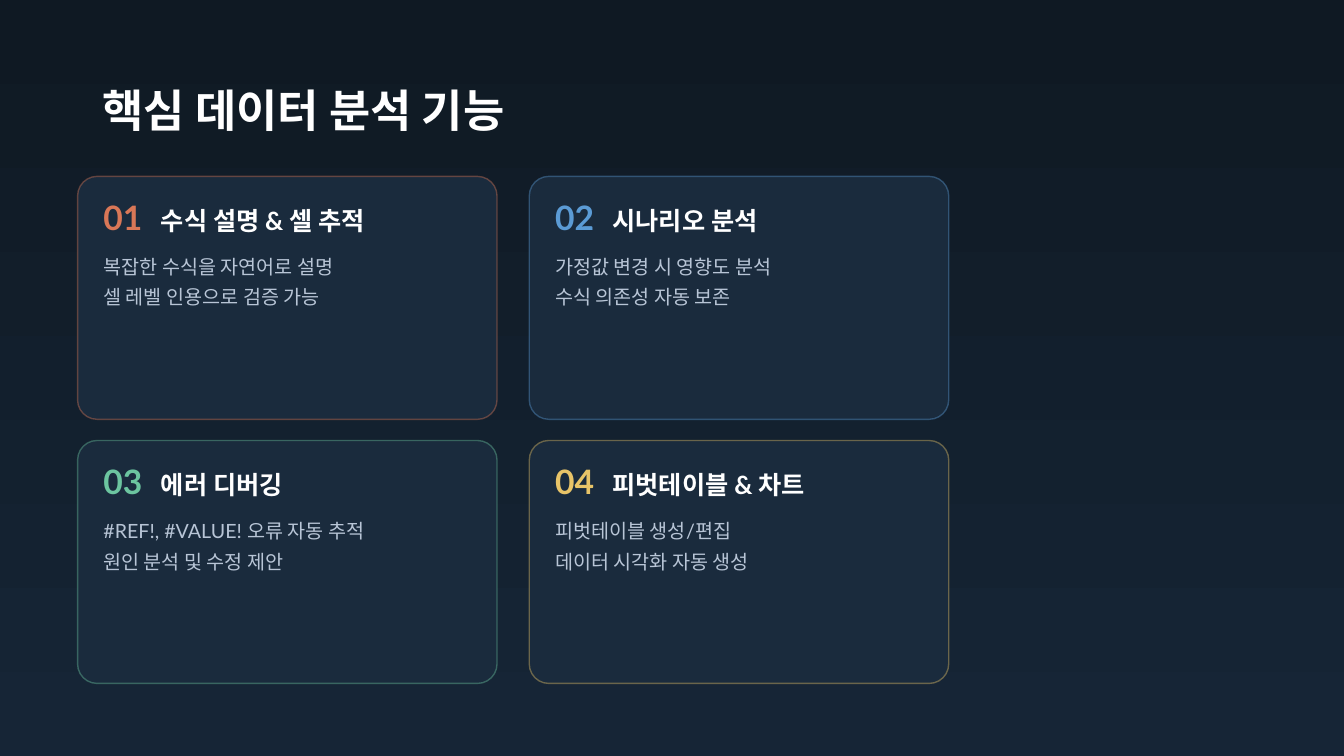
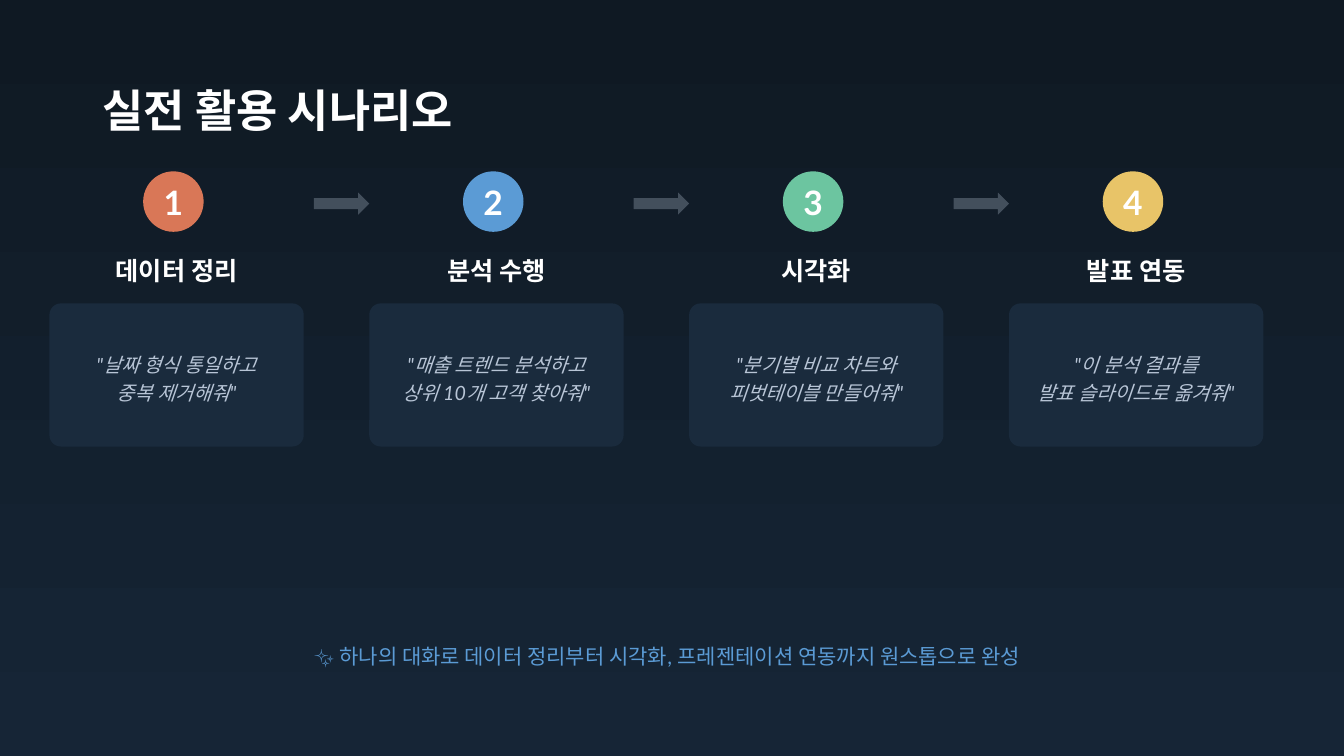
from lxml.etree import SubElement
from pptx import Presentation
from pptx.dml.color import RGBColor
from pptx.enum.shapes import MSO_SHAPE
from pptx.enum.text import MSO_ANCHOR, PP_ALIGN
from pptx.oxml.ns import qn
from pptx.util import Inches, Pt

FONT = "Lato"
COLORS = {
    "top": "0F1923", "bottom": "162536", "card": "1A2B3D",
    "white": "FFFFFF", "muted": "B8C5D6", "orange": "D97757",
    "blue": "5B9BD5", "green": "6CC5A0", "gold": "E8C468",
}
ACCENTS = ["orange", "blue", "green", "gold"]
TITLE_BOX = (0.92, 0.4, 11.5, 1.45)
CARDS_BOX = (0.77, 1.75, 8.64, 5.03)
STEPS_BOX = (0.49, 1.7, 12.04, 2.73)
SUMMARY_BOX = (0.49, 6.23, 12.25, 0.55)

FEATURES = [
    ("수식 설명 & 셀 추적", ["복잡한 수식을 자연어로 설명", "셀 레벨 인용으로 검증 가능"]),
    ("시나리오 분석", ["가정값 변경 시 영향도 분석", "수식 의존성 자동 보존"]),
    ("에러 디버깅", ["#REF!, #VALUE! 오류 자동 추적", "원인 분석 및 수정 제안"]),
    ("피벗테이블 & 차트", ["피벗테이블 생성/편집", "데이터 시각화 자동 생성"]),
]
STEPS = [
    ("데이터 정리", ['"날짜 형식 통일하고', '중복 제거해줘"']),
    ("분석 수행", ['"매출 트렌드 분석하고', '상위 10개 고객 찾아줘"']),
    ("시각화", ['"분기별 비교 차트와', '피벗테이블 만들어줘"']),
    ("발표 연동", ['"이 분석 결과를', '발표 슬라이드로 옮겨줘"']),
]


def rgb(name):
    """Return the named palette colour."""
    return RGBColor.from_string(COLORS[name])


def grid(box, cols, rows, gap_x=0, gap_y=0):
    """Return the cells of an even grid, row by row."""
    x, y, w, h = box
    cw = (w - gap_x * (cols - 1)) / cols
    ch = (h - gap_y * (rows - 1)) / rows
    return [(x + c * (cw + gap_x), y + r * (ch + gap_y), cw, ch)
            for r in range(rows) for c in range(cols)]


def paint(fill, color, alpha=100):
    """Apply a solid colour with an opacity in percent."""
    fill.solid()
    fill.fore_color.rgb = rgb(color)
    if alpha < 100:
        clr = fill._xPr.find(qn("a:solidFill"))[0]
        SubElement(clr, qn("a:alpha"), val=str(alpha * 1000))


def frame(sp, insets, anchor=MSO_ANCHOR.MIDDLE, wrap=True):
    """Set up the text frame of a shape and return it."""
    tf = sp.text_frame
    tf.word_wrap = wrap
    tf.vertical_anchor = anchor
    tf.margin_left, tf.margin_top, tf.margin_right, tf.margin_bottom = map(Inches, insets)
    return tf


def write(p, text, size, color="white", bold=False, italic=False,
          align=PP_ALIGN.CENTER, spacing=None):
    """Add a formatted run to a paragraph."""
    p.alignment = align
    if spacing:
        p.line_spacing = spacing
    r = p.add_run()
    r.text = text
    f = r.font
    f.name, f.size, f.bold, f.italic = FONT, Pt(size), bold, italic
    f.color.rgb = rgb(color)


def shape(s, kind, box, fill, alpha=100, line=None):
    """Add a filled preset shape without shadow."""
    sp = s.shapes.add_shape(kind, *map(Inches, box))
    sp.shadow.inherit = False
    paint(sp.fill, fill, alpha)
    if line:
        sp.line.width = Pt(1)
        paint(sp.line.fill, line, 40)
    else:
        sp.line.fill.background()
    if kind == MSO_SHAPE.ROUNDED_RECTANGLE:
        sp.adjustments[0] = 0.08
    return sp


def label(s, box, text, size, insets=(0, 0, 0, 0), **fmt):
    """Add a one-line text box."""
    sp = s.shapes.add_textbox(*map(Inches, box))
    write(frame(sp, insets).paragraphs[0], text, size, **fmt)


def base_slide(prs, title):
    """Add a slide with the shared background and title."""
    s = prs.slides.add_slide(prs.slide_layouts[6])
    fill = s.background.fill
    fill.gradient()
    fill.gradient_angle = 270
    for stop, pos, color in zip(fill.gradient_stops, (0, 1), ("top", "bottom")):
        stop.position = pos
        stop.color.rgb = rgb(color)
    label(s, TITLE_BOX, title, 32, (0.1, 0.05, 0.1, 0.05), bold=True,
          align=PP_ALIGN.LEFT, spacing=0.9)
    return s


def feature_card(s, box, number, accent, heading, lines):
    """Draw a numbered feature card in its box."""
    sp = shape(s, MSO_SHAPE.ROUNDED_RECTANGLE, box, "card", line=accent)
    tf = frame(sp, (0.2, 0.15, 0.15, 0.11), MSO_ANCHOR.TOP)
    p = tf.paragraphs[0]
    tabs = SubElement(p._p.get_or_add_pPr(), qn("a:tabLst"))
    SubElement(tabs, qn("a:tab"), pos=str(Inches(0.57)), algn="l")
    write(p, f"{number:02}", 24, accent, bold=True, align=PP_ALIGN.LEFT)
    write(p, "\t" + heading, 18, bold=True, align=PP_ALIGN.LEFT)
    for i, line in enumerate(lines):
        p = tf.add_paragraph()
        if i == 0:
            p.space_before = Pt(7)
        write(p, line, 14, "muted", align=PP_ALIGN.LEFT, spacing=Pt(22))


def step_column(s, box, number, accent, heading, lines):
    """Draw a step: numbered circle, heading and sample request."""
    x, y, w, h = box
    sp = shape(s, MSO_SHAPE.OVAL, (x + 0.93, y, 0.6, 0.6), accent)
    tf = frame(sp, (0, 0, 0, 0), wrap=False)
    write(tf.paragraphs[0], str(number), 24, bold=True)
    label(s, (x, y + 0.76, w, 0.44), heading, 18, bold=True)
    sp = shape(s, MSO_SHAPE.ROUNDED_RECTANGLE, (x, y + 1.31, w, h - 1.31), "card")
    tf = frame(sp, (0.13, 0.11, 0.13, 0.09))
    for i, line in enumerate(lines):
        p = tf.add_paragraph() if i else tf.paragraphs[0]
        write(p, line, 14, "muted", italic=True, spacing=Pt(20))


def step_arrow(s, box):
    """Draw the arrow that leads from a step to the next."""
    x, y, w, _ = box
    shape(s, MSO_SHAPE.RIGHT_ARROW, (x + w + 0.1, y + 0.21, 0.55, 0.22), "muted", 30)


def features_slide(prs):
    """Build the slide of four feature cards."""
    s = base_slide(prs, "핵심 데이터 분석 기능")
    cells = grid(CARDS_BOX, 2, 2, 0.32, 0.21)
    for i, (box, accent, feature) in enumerate(zip(cells, ACCENTS, FEATURES), 1):
        feature_card(s, box, i, accent, *feature)


def scenario_slide(prs):
    """Build the slide of four steps and a summary."""
    s = base_slide(prs, "실전 활용 시나리오")
    cells = grid(STEPS_BOX, 4, 1, 0.65)
    for i, (box, accent, step) in enumerate(zip(cells, ACCENTS, STEPS), 1):
        step_column(s, box, i, accent, *step)
        if i < len(STEPS):
            step_arrow(s, box)
    label(s, SUMMARY_BOX,
          "✨ 하나의 대화로 데이터 정리부터 시각화, 프레젠테이션 연동까지 원스톱으로 완성",
          15, color="blue")


def main():
    """Build and save the presentation."""
    prs = Presentation()
    prs.slide_width, prs.slide_height = Inches(13.33), Inches(7.5)
    features_slide(prs)
    scenario_slide(prs)
    prs.save("out.pptx")


if __name__ == "__main__":
    main()
